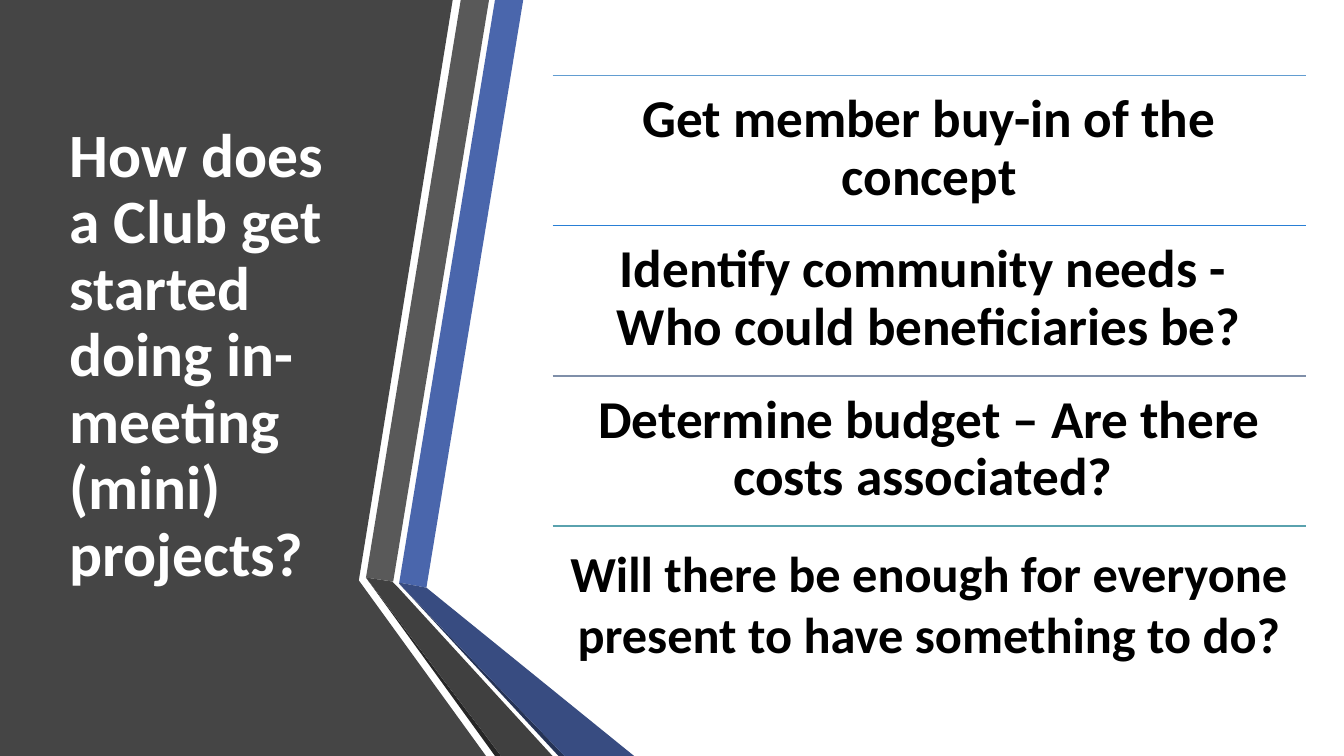
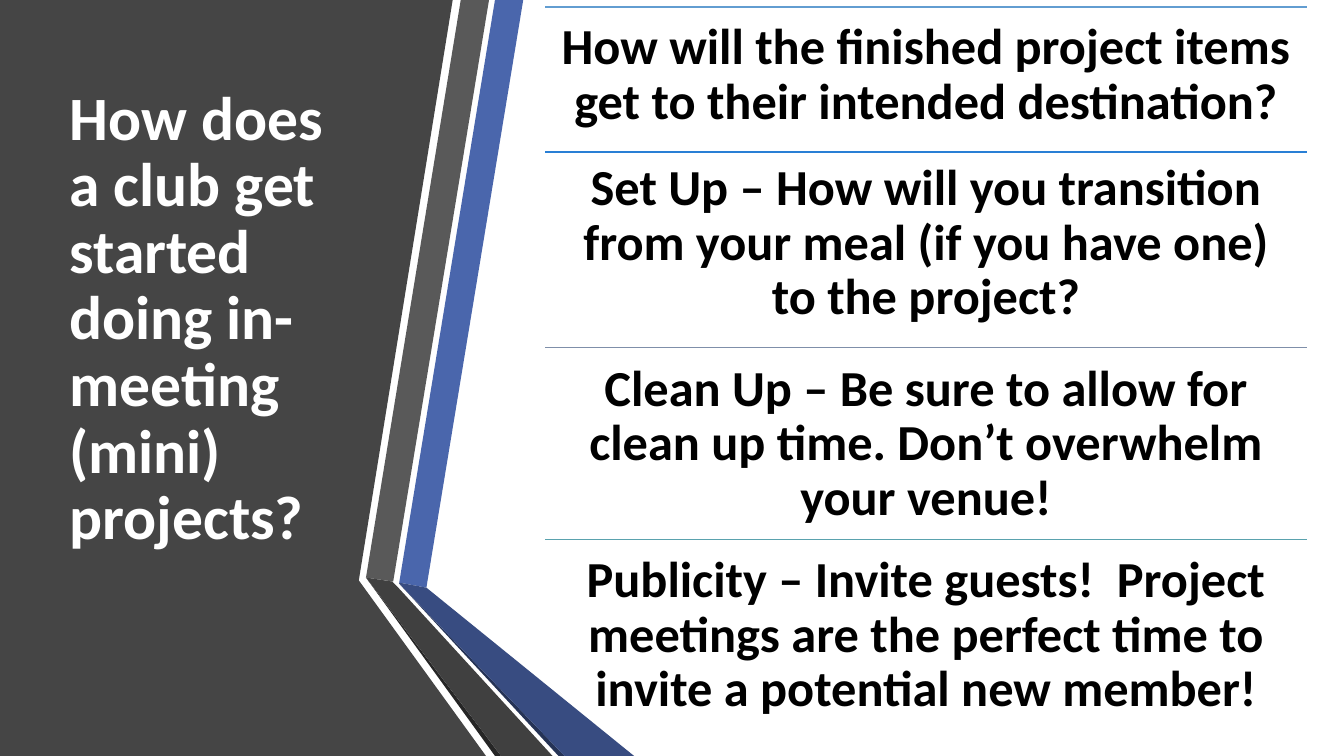
from pptx import Presentation
from pptx.dml.color import RGBColor
from pptx.enum.shapes import MSO_CONNECTOR
from pptx.enum.text import MSO_ANCHOR, PP_ALIGN
from pptx.oxml.ns import qn
from pptx.util import Inches, Pt
from lxml.etree import SubElement

COLORS = {
    "panel": "454545",
    "blue": "4A66AC",
    "gray": "595959",
    "gray_shadow": "262626",
    "blue_shadow": "253356",
    "blue_fold": "384C81",
    "gray_fold": "404040",
    "title": "FFFFFF",
    "body": "000000",
}
RULE_COLORS = ["629DD1", "297FD5", "7F8FA9", "5AA2AE"]
FONT = "Calibri"

BANDS = [
    ("panel", [(0, 0), (4.49, 0), (3.56, 5.75), (3.56, 5.76), (4.82, 7.5), (0, 7.5)]),
    ("blue", [(3.96, 5.78), (4.23, 5.83), (5.19, 0), (4.91, 0)]),
    ("gray", [(4.85, 0), (4.57, 0), (3.63, 5.73), (3.9, 5.77)]),
    ("gray_shadow", [(3.63, 5.73), (4.91, 7.5), (4.97, 7.5)]),
    ("blue_shadow", [(3.96, 5.79), (5.54, 7.5), (5.6, 7.5)]),
    ("blue_fold", [(3.96, 5.79), (5.6, 7.5), (6.29, 7.5), (4.23, 5.83), (3.96, 5.78)]),
    ("gray_fold", [(5.48, 7.5), (3.95, 5.83), (3.89, 5.77), (3.63, 5.73), (4.97, 7.5)]),
]

FIRST_TOP = 0.75
ROW_HEIGHT = 1.49
SLIDES = [
    {
        "title": "How does a Club get started doing in-meeting (mini) projects?",
        "title_bottom_margin": 0.05,
        "left": 5.48,
        "width": 7.47,
        "rule_tops": [FIRST_TOP + ROW_HEIGHT * row for row in range(4)],
        "texts": [
            (FIRST_TOP, ROW_HEIGHT, 38, 0.9, 0.16, "Get member buy-in of the concept"),
            (FIRST_TOP + ROW_HEIGHT, ROW_HEIGHT, 38, 0.9, 0.16,
             "Identify community needs -  Who could beneficiaries be?"),
            (FIRST_TOP + 2 * ROW_HEIGHT, ROW_HEIGHT, 38, 0.9, 0.16,
             "Determine budget – Are there costs associated? "),
            (5.33, 1.31, 36, 1.0, 0.05,
             "Will there be enough for everyone present to have something to do?"),
        ],
    },
    {
        "title": "How does a club get started doing in-meeting (mini) projects?",
        "title_bottom_margin": 0.78,
        "left": 5.41,
        "width": 7.55,
        "rule_tops": [0.07, 1.51, 3.45, 5.35],
        "texts": [
            (0.06, 1.44, 36, 0.9, 0.15,
             "How will the finished project items get to their intended destination?"),
            (1.46, 1.94, 36, 0.9, 0.15,
             "Set Up – How will you transition from your meal (if you have one) to the project?"),
            (3.45, 1.9, 36, 0.9, 0.15,
             "Clean Up – Be sure to allow for clean up time. Don’t overwhelm your venue!"),
            (5.35, 2.14, 36, 0.9, 0.15,
             "Publicity – Invite guests!  Project meetings are the perfect time to "
             "invite a potential new member!"),
        ],
    },
]


def add_band(slide, color, points):
    corners = [(Inches(x), Inches(y)) for x, y in points]
    builder = slide.shapes.build_freeform(*corners[0])
    builder.add_line_segments(corners[1:], close=True)
    shape = builder.convert_to_shape()
    shape.shadow.inherit = False
    shape.fill.solid()
    shape.fill.fore_color.rgb = RGBColor.from_string(COLORS[color])
    shape.line.fill.background()


def add_text(slide, box, text, size, color, alignment, spacing):
    shape = slide.shapes.add_textbox(*[Inches(length) for length in box])
    text_frame = shape.text_frame
    text_frame.word_wrap = True
    text_frame.text = text
    paragraph = text_frame.paragraphs[0]
    paragraph.alignment = alignment
    paragraph.line_spacing = spacing
    font = paragraph.runs[0].font
    font.name = FONT
    font.size = Pt(size)
    font.bold = True
    font.color.rgb = RGBColor.from_string(COLORS[color])
    return text_frame


presentation = Presentation()
presentation.slide_width = Inches(13.33)
presentation.slide_height = Inches(7.5)

for content in SLIDES:
    slide = presentation.slides.add_slide(presentation.slide_layouts[6])
    for color, points in BANDS:
        add_band(slide, color, points)

    title_frame = add_text(slide, (0.59, 0.75, 3.04, 5.58), content["title"],
                           44, "title", PP_ALIGN.LEFT, 0.9)
    title_frame.vertical_anchor = MSO_ANCHOR.MIDDLE
    title_frame.margin_bottom = Inches(content["title_bottom_margin"])

    left, width = content["left"], content["width"]
    for rule_top, rule_color in zip(content["rule_tops"], RULE_COLORS):
        rule = slide.shapes.add_connector(
            MSO_CONNECTOR.STRAIGHT, Inches(left), Inches(rule_top),
            Inches(left + width), Inches(rule_top))
        rule.line.color.rgb = RGBColor.from_string(rule_color)
        rule.line.width = Pt(1)
        SubElement(rule._element.spPr, qn("a:effectLst"))

    for top, height, size, spacing, margin, text in content["texts"]:
        body_frame = add_text(slide, (left, top, width, height), text,
                              size, "body", PP_ALIGN.CENTER, spacing)
        body_frame.margin_top = body_frame.margin_bottom = Inches(margin)
        body_frame.margin_left = body_frame.margin_right = Inches(max(margin, 0.1))

presentation.save("out.pptx")
